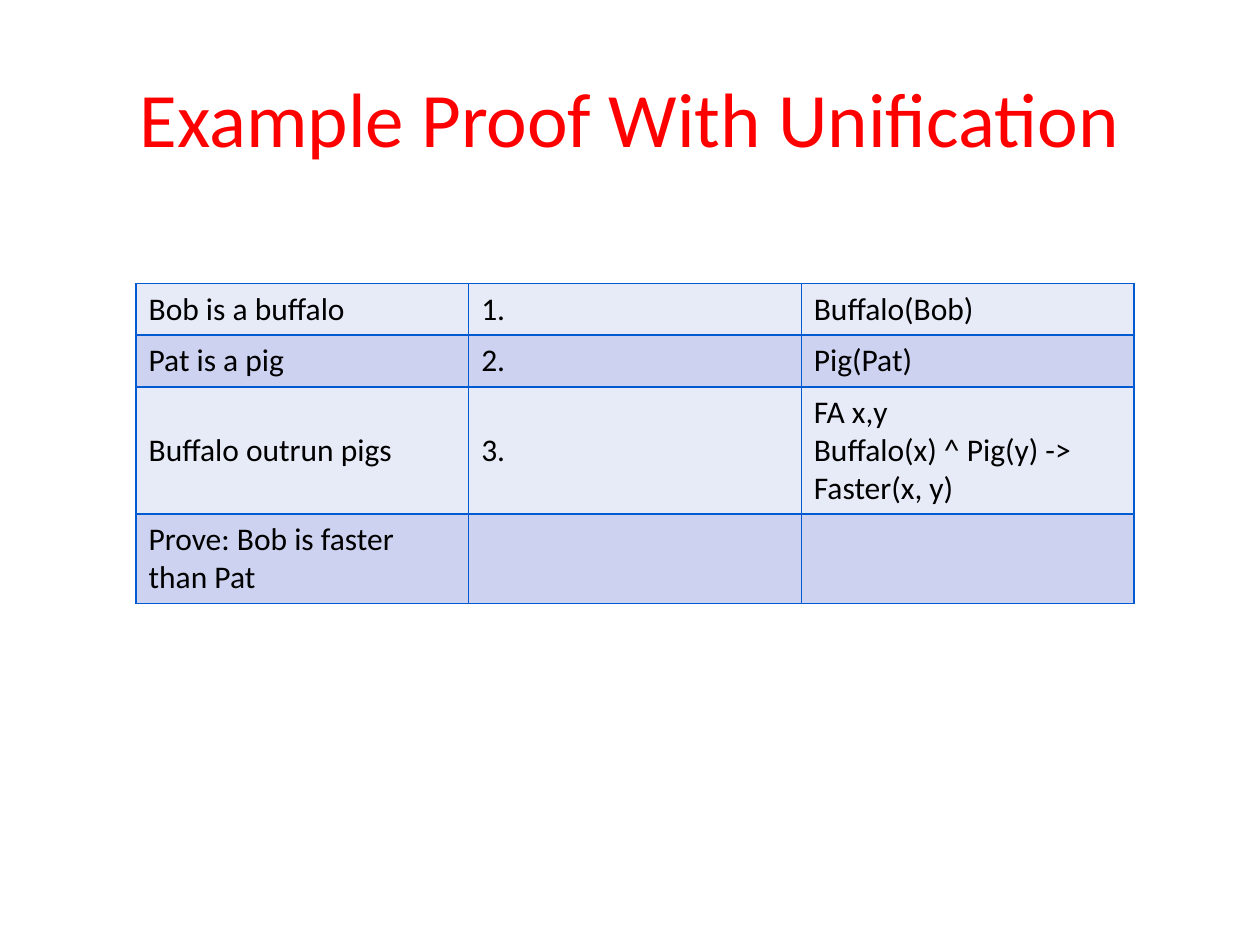
import pptx
import pptx.dml.color
import pptx.enum.text
import pptx.oxml
import pptx.oxml.ns
import pptx.util
from pptx.util import Inches


def color(hex_string):
    return pptx.dml.color.RGBColor.from_string(hex_string)


class SlideBuilder:
    FONT = "Calibri"
    TITLE_COLOR = "FF0000"
    TEXT_COLOR = "000000"
    BORDER_COLOR = "005BD3"
    BAND_FILLS = ("E7EAF7", "CCD2EF")

    def __init__(self, slide):
        self.slide = slide

    def style(self, paragraph, size, hex_string):
        paragraph.font.name = self.FONT
        paragraph.font.size = pptx.util.Pt(size)
        paragraph.font.color.rgb = color(hex_string)

    def title(self, text, left, top, width, height):
        heading = self.slide.shapes.add_textbox(
            Inches(left), Inches(top), Inches(width), Inches(height))
        frame = heading.text_frame
        frame.word_wrap = True
        frame.vertical_anchor = pptx.enum.text.MSO_ANCHOR.MIDDLE
        paragraph = frame.paragraphs[0]
        paragraph.text = text
        paragraph.alignment = pptx.enum.text.PP_ALIGN.CENTER
        self.style(paragraph, 44, self.TITLE_COLOR)

    def border(self, cell):
        properties = cell._tc.get_or_add_tcPr()
        for position, side in enumerate(("lnL", "lnR", "lnT", "lnB")):
            # Border lines come before the fill in the cell properties
            properties.insert(position, pptx.oxml.parse_xml(
                f'<a:{side} {pptx.oxml.ns.nsdecls("a")} w="{pptx.util.Pt(1)}">'
                f'<a:solidFill><a:srgbClr val="{self.BORDER_COLOR}"/></a:solidFill>'
                f'</a:{side}>'))

    def table(self, rows, left, top, column_width, row_heights):
        columns = len(rows[0])
        grid = self.slide.shapes.add_table(
            len(rows), columns, Inches(left), Inches(top),
            Inches(column_width * columns), Inches(sum(row_heights))).table
        grid.first_row = False
        for column in grid.columns:
            column.width = Inches(column_width)
        for r, (texts, height) in enumerate(zip(rows, row_heights)):
            grid.rows[r].height = Inches(height)
            for c, text in enumerate(texts):
                cell = grid.cell(r, c)
                cell.text = text
                cell.vertical_anchor = pptx.enum.text.MSO_ANCHOR.MIDDLE
                cell.fill.solid()
                cell.fill.fore_color.rgb = color(self.BAND_FILLS[r % 2])
                self.border(cell)
                self.style(cell.text_frame.paragraphs[0], 18, self.TEXT_COLOR)


def main():
    presentation = pptx.Presentation()
    presentation.slide_width = Inches(10)
    presentation.slide_height = Inches(7.5)
    builder = SlideBuilder(
        presentation.slides.add_slide(presentation.slide_layouts[6]))

    # Title
    builder.title("Example Proof With Unification", 0.5, 0.3, 9, 1.25)

    # Proof steps: statement, number, logical form (\v is a line break)
    proof_steps = [
        ("Bob is a buffalo", "1.", "Buffalo(Bob)"),
        ("Pat is a pig", "2.", "Pig(Pat)"),
        ("Buffalo outrun pigs", "3.",
         "FA x,y\vBuffalo(x) ^ Pig(y) -> Faster(x, y)"),
        ("Prove: Bob is faster than Pat", "", ""),
    ]
    builder.table(proof_steps, 1.08, 2.25, 2.64, (0.41, 0.41, 1.01, 0.71))

    presentation.save("out.pptx")


if __name__ == "__main__":
    main()
